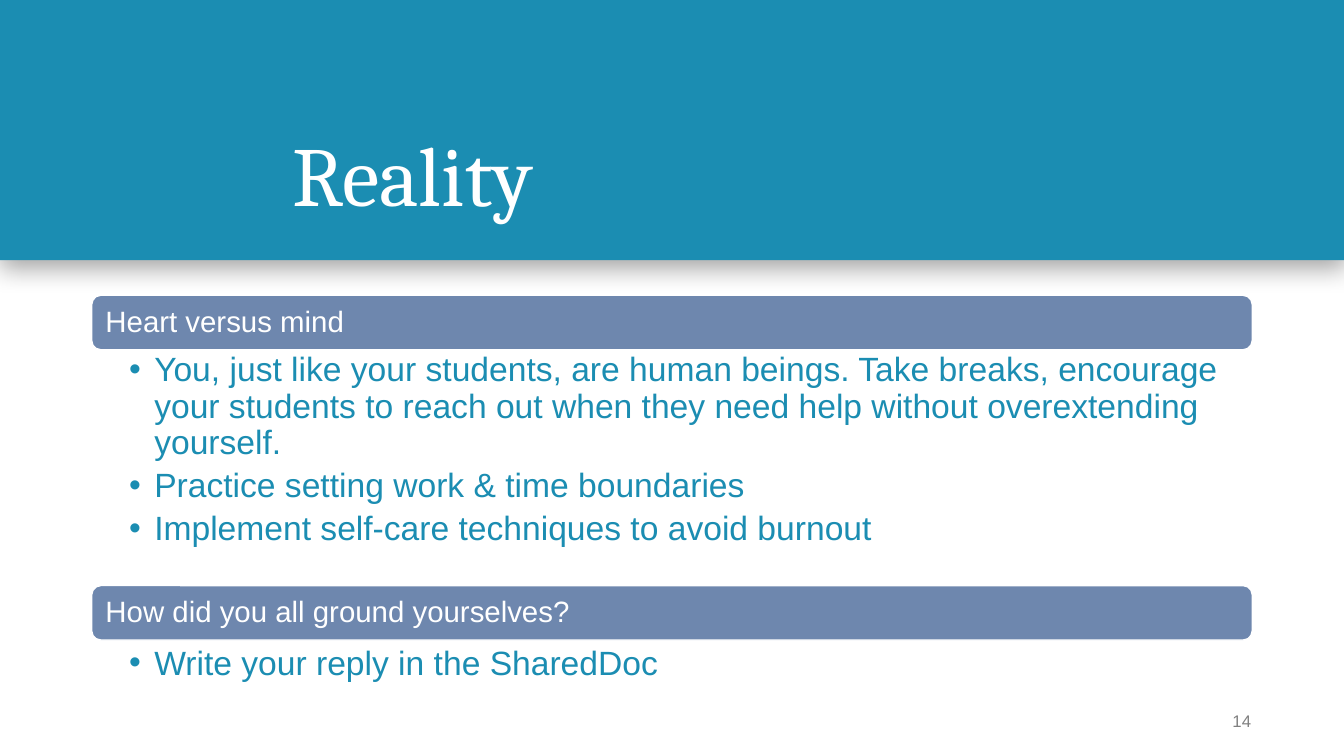
from dataclasses import dataclass

from lxml import etree
from pptx import Presentation
from pptx.dml.color import RGBColor
from pptx.enum.shapes import MSO_SHAPE as Shape
from pptx.enum.text import MSO_ANCHOR as Anchor, MSO_AUTO_SIZE as AutoSize, PP_ALIGN as Align
from pptx.oxml import parse_xml
from pptx.oxml.ns import nsdecls, qn
from pptx.util import Inches, Pt

# Content: heading, bar top, list top, list height, bullets
TITLE = "Reality"
PAGE_NUMBER = "14"
SECTIONS = [
    ("Heart versus mind", 2.93, 3.47, 2.38, [
        "You, just like your students, are human beings. Take breaks, encourage "
        "your students to reach out when they need help without overextending yourself.",
        "Practice setting work & time boundaries",
        "Implement self-care techniques to avoid burnout",
    ]),
    ("How did you all ground yourselves?", 5.81, 6.38, 0.42, [
        "Write your reply in the SharedDoc",
    ]),
]


@dataclass(frozen=True)
class Theme:
    teal: str = "1B8DB2"
    slate: str = "6E87AE"
    white: str = "FFFFFF"
    gray: str = "808080"
    serif: str = "Cambria"
    sans: str = "Arial"
    title_size: int = 60
    heading_size: int = 21
    bullet_size: int = 24
    number_size: int = 12


THEME = Theme()
SLIDE_WIDTH, SLIDE_HEIGHT = 13.33, 7.5
BAND_HEIGHT = 2.58
LEFT, WIDTH, BAR_HEIGHT = 0.91, 11.51, 0.54
BULLET_INDENT = 0.25


def place(shape, left, top, width, height):
    box = {"left": left, "top": top, "width": width, "height": height}
    for name, value in box.items():
        setattr(shape, name, Inches(value))


def set_frame(shape, anchor, margins):
    frame = shape.text_frame
    sides = ("margin_left", "margin_top", "margin_right", "margin_bottom")
    values = {"word_wrap": True, "auto_size": AutoSize.NONE, "vertical_anchor": anchor}
    values.update({side: Inches(margin) for side, margin in zip(sides, margins)})
    for name, value in values.items():
        setattr(frame, name, value)
    return frame


def write(para, text, font, size, color, **layout):
    para.text = text
    layout = {"alignment": Align.LEFT, "space_before": Pt(0), "line_spacing": 0.9} | layout
    for name, value in layout.items():
        setattr(para, name, value)
    for name, value in {"name": font, "size": Pt(size), "bold": False}.items():
        setattr(para.font, name, value)
    para.font.color.rgb = RGBColor.from_string(color)


def add_bullet(para):
    properties = para._p.get_or_add_pPr()
    properties.set("marL", str(Inches(BULLET_INDENT)))
    properties.set("indent", str(-Inches(BULLET_INDENT)))
    etree.SubElement(properties, qn("a:buChar")).set("char", "•")


def add_block(page, kind, bounds, color):
    block = page.shapes.add_shape(kind, *map(Inches, bounds))
    block.shadow.inherit = False
    block.fill.solid()
    block.fill.fore_color.rgb = RGBColor.from_string(color)
    return block


def add_band(page):
    band = add_block(page, Shape.RECTANGLE, (0, 0, SLIDE_WIDTH, BAND_HEIGHT), THEME.teal)
    band.line.fill.background()
    effects = band.element.spPr.find(qn("a:effectLst"))
    effects.append(parse_xml(
        f'<a:outerShdw {nsdecls("a")} blurRad="{Pt(18)}" dist="{Pt(5)}" dir="5400000" '
        'algn="t" rotWithShape="0"><a:srgbClr val="000000"><a:alpha val="35000"/>'
        '</a:srgbClr></a:outerShdw>'))
    page.shapes.title.element.addprevious(band.element)


def add_section(page, body, heading, bar_top, list_top, list_height, bullets):
    # Heading bar
    bar = add_block(page, Shape.ROUNDED_RECTANGLE, (LEFT, bar_top, WIDTH, BAR_HEIGHT), THEME.slate)
    bar.line.color.rgb = RGBColor.from_string(THEME.white)
    bar.line.width = Pt(1)
    frame = set_frame(bar, Anchor.MIDDLE, (0.11, 0.05, 0.11, 0.05))
    write(frame.paragraphs[0], heading, THEME.sans, THEME.heading_size, THEME.white)

    # Bulleted list
    place(body, LEFT, list_top, WIDTH, list_height)
    frame = set_frame(body, Anchor.TOP, (0.37, 0.03, 0.19, 0.03))
    for index, text in enumerate(bullets):
        para = frame.add_paragraph() if index else frame.paragraphs[0]
        add_bullet(para)
        write(para, text, THEME.sans, THEME.bullet_size, THEME.teal,
              level=1, space_after=Pt(0.2 * THEME.bullet_size))


def main():
    deck = Presentation()
    deck.slide_width, deck.slide_height = Inches(SLIDE_WIDTH), Inches(SLIDE_HEIGHT)
    page = deck.slides.add_slide(deck.slide_layouts.get_by_name("Two Content"))

    # Title band
    add_band(page)
    title = page.shapes.title
    place(title, 2.8, 0.44, 9.62, 1.84)
    frame = set_frame(title, Anchor.BOTTOM, (0.1, 0.05, 0.1, 0.05))
    write(frame.paragraphs[0], TITLE, THEME.serif, THEME.title_size, THEME.white)

    # Sections
    for number, section in enumerate(SECTIONS, start=1):
        add_section(page, page.placeholders[number], *section)

    # Page number
    box = page.shapes.add_textbox(*map(Inches, (11.41, 6.95, 1, 0.4)))
    frame = set_frame(box, Anchor.MIDDLE, (0.1, 0.05, 0, 0.05))
    write(frame.paragraphs[0], PAGE_NUMBER, THEME.sans, THEME.number_size, THEME.gray,
          alignment=Align.RIGHT, line_spacing=1.0)

    deck.save("out.pptx")


if __name__ == "__main__":
    main()
